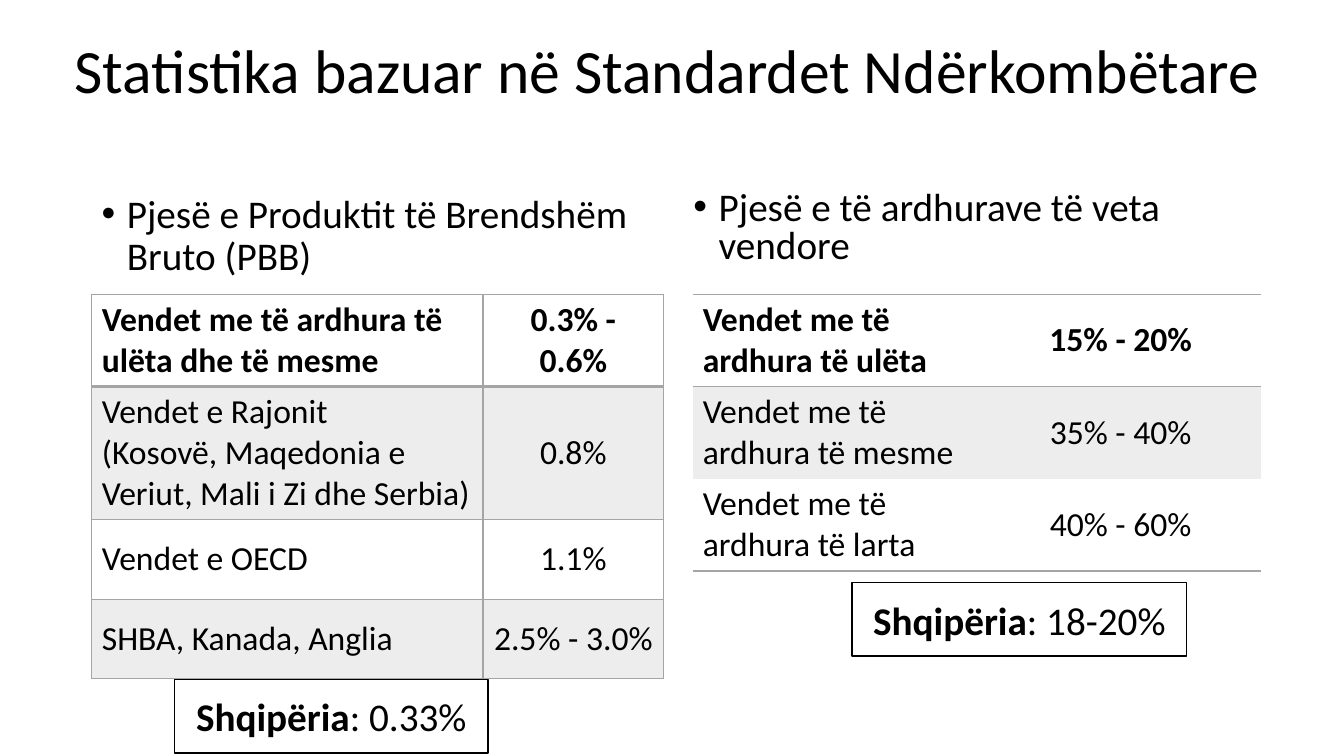
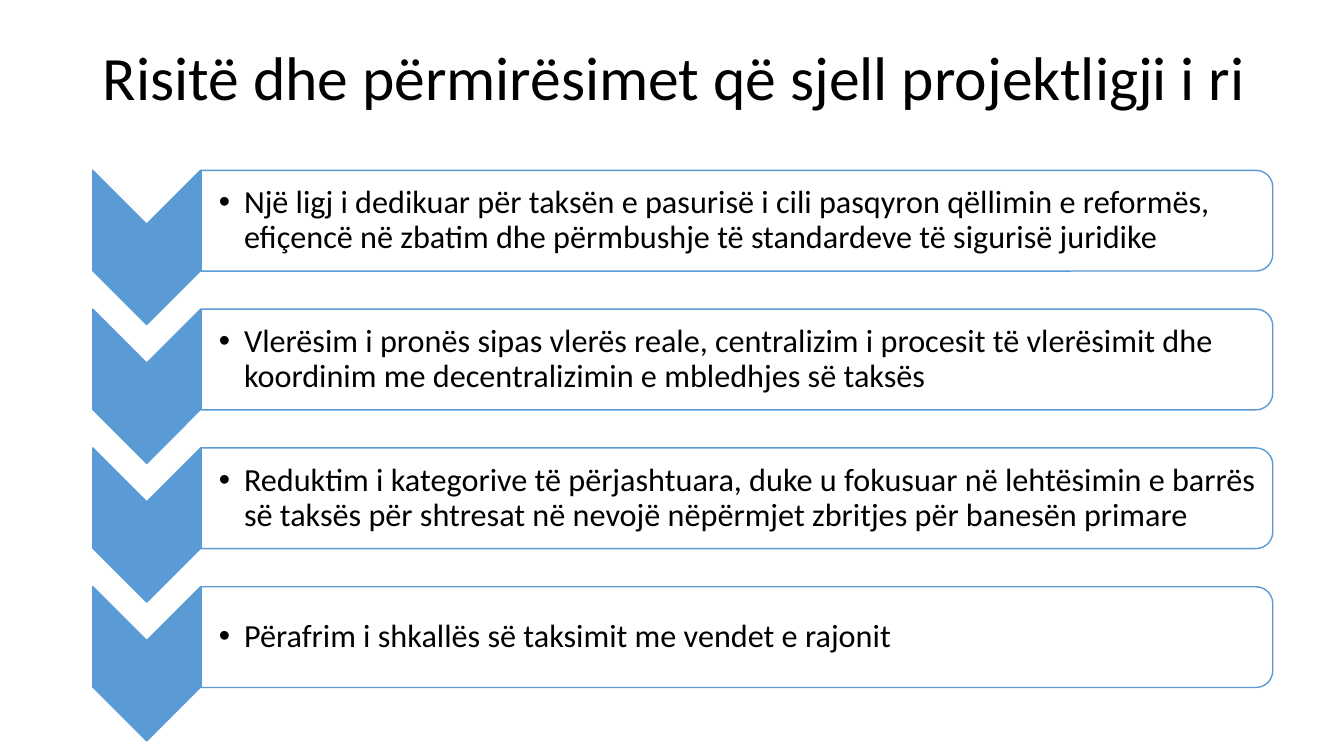
from pptx import Presentation
from pptx import util as u
from pptx.dml.color import RGBColor
from pptx.enum import shapes, text
from pptx.oxml.ns import qn
from lxml import etree

WIDTH, HEIGHT = u.Inches(13.33), u.Inches(7.5)
FONT = "Calibri"
BLACK, WHITE, GREY, PALE, BLUE = "000000", "FFFFFF", "A5A5A5", "EDEDED", "5B9BD5"
PLAIN_TABLE = "{2D5ABB26-0587-4C30-8999-92F81FD0307C}"
TABLE_TOP, HEAD_ROW, ROW = 38.93, 12.2, 10.53


def color(value):
    return RGBColor.from_string(value)


def across(percent):
    return round(WIDTH * percent / 100)


def down(percent):
    return round(HEIGHT * percent / 100)


def area(left, top, width, height):
    return across(left), down(top), across(width), down(height)


def add_bullet(paragraph):
    properties = paragraph._p.get_or_add_pPr()
    properties.set("marL", str(u.Inches(0.25)))
    properties.set("indent", str(-u.Inches(0.25)))
    etree.SubElement(properties, qn("a:buFont"), typeface="Arial")
    etree.SubElement(properties, qn("a:buChar"), char="•")


def write(frame, content, size=28, bold=False, align=text.PP_ALIGN.LEFT,
          anchor=text.MSO_ANCHOR.MIDDLE, spacing=None, bullet=False):
    frame.word_wrap = True
    frame.auto_size = text.MSO_AUTO_SIZE.NONE
    frame.vertical_anchor = anchor
    runs = [(content, bold)] if isinstance(content, str) else content
    paragraph = frame.paragraphs[0]
    for words, strong in runs:
        run = paragraph.add_run()
        run.text = words
        run.font.name, run.font.size, run.font.bold = FONT, u.Pt(size), strong
        run.font.color.rgb = color(BLACK)
    paragraph.alignment = align
    paragraph.line_spacing = spacing
    if bullet:
        add_bullet(paragraph)


def add_titled_slide(presentation, title, place):
    slide = presentation.slides.add_slide(presentation.slide_layouts[5])
    shape = slide.shapes.title
    shape.left, shape.top, shape.width, shape.height = area(*place)
    write(shape.text_frame, title, size=44, spacing=0.9)
    return slide


def add_text(slide, content, place, insets=None, **style):
    frame = slide.shapes.add_textbox(*area(*place)).text_frame
    if insets:
        (frame.margin_left, frame.margin_top,
         frame.margin_right, frame.margin_bottom) = map(u.Inches, insets)
    write(frame, content, **style)


def add_shape(slide, kind, place, fill, line):
    shape = slide.shapes.add_shape(kind, *place)
    shape.shadow.inherit = False
    shape.fill.solid()
    shape.fill.fore_color.rgb = color(fill)
    shape.line.color.rgb = color(line)
    shape.line.width = u.Pt(1)
    return shape


def add_turned_shape(slide, kind, place, fill):
    left, top, width, height = area(*place)
    shift = (width - height) // 2
    shape = add_shape(slide, kind, (left + shift, top - shift, height, width), fill, BLUE)
    shape.rotation = 90


def add_result(slide, value, place):
    shape = add_shape(slide, shapes.MSO_SHAPE.RECTANGLE, area(*place), WHITE, BLACK)
    write(shape.text_frame, [("Shqipëria", True), (f": {value}", False)],
          align=text.PP_ALIGN.CENTER)


def set_borders(cell, borders):
    properties = cell._tc.get_or_add_tcPr()
    for side in "LRTB":
        points = borders.get(side, 0)
        line = etree.SubElement(properties, qn(f"a:ln{side}"), w=str(u.Pt(points)))
        if points:
            fill = etree.SubElement(line, qn("a:solidFill"))
            etree.SubElement(fill, qn("a:srgbClr"), val=GREY)
        else:
            etree.SubElement(line, qn("a:noFill"))


def fill_cell(cell, content, row, column, borders):
    set_borders(cell, borders)
    if row % 2:
        cell.fill.solid()
        cell.fill.fore_color.rgb = color(PALE)
    else:
        cell.fill.background()
    cell.vertical_anchor = text.MSO_ANCHOR.MIDDLE
    align = text.PP_ALIGN.CENTER if column else text.PP_ALIGN.LEFT
    lines = content.split("\n")
    frame = cell.text_frame
    for line in lines:
        paragraph = frame.paragraphs[0] if line is lines[0] else frame.add_paragraph()
        paragraph.alignment = align
        run = paragraph.add_run()
        run.text = line
        run.font.name, run.font.size, run.font.bold = FONT, u.Pt(24), row == 0
        run.font.color.rgb = color(BLACK)


def add_table(slide, rows, left, columns, heights, borders_for):
    place = area(left, TABLE_TOP, sum(columns), sum(heights))
    table = slide.shapes.add_table(len(rows), len(columns), *place).table
    table.first_row = table.horz_banding = False
    table._tbl.tblPr.find(qn("a:tableStyleId")).text = PLAIN_TABLE
    for column, width in zip(table.columns, columns):
        column.width = across(width)
    for row, (contents, height) in enumerate(zip(rows, heights)):
        table.rows[row].height = down(height)
        for column, content in enumerate(contents):
            fill_cell(table.cell(row, column), content, row, column, borders_for(row))


def full_borders(row):
    return {"L": 1, "R": 1, "T": 2 if row == 1 else 1, "B": 1 if row else 2}


def open_borders(row):
    return ({"T": 1, "B": 1}, {"T": 1}, {"B": 1})[row]


def build_statistics(presentation):
    slide = add_titled_slide(presentation, "Statistika bazuar në Standardet Ndërkombëtare",
                             (4.8, 0, 92.12, 19.33))
    top = text.MSO_ANCHOR.TOP
    add_text(slide, "Pjesë e Produktit të Brendshëm Bruto (PBB)", (6.83, 25.07, 42.53, 12),
             anchor=top, spacing=0.9, bullet=True)
    add_text(slide, "Pjesë e të ardhurave të veta vendore", (50.86, 24.67, 42.31, 12),
             anchor=top, spacing=0.8, bullet=True)
    product_share = [
        ("Vendet me të ardhura të ulëta dhe të mesme", "0.3% - 0.6%"),
        ("Vendet e Rajonit\n(Kosovë, Maqedonia e Veriut, Mali i Zi dhe Serbia)", "0.8%"),
        ("Vendet e OECD", "1.1%"),
        ("SHBA, Kanada, Anglia", "2.5% - 3.0%"),
    ]
    revenue_share = [
        ("Vendet me të ardhura të ulëta", "15% - 20%"),
        ("Vendet me të ardhura të mesme", "35% - 40%"),
        ("Vendet me të ardhura të larta", "40% - 60%"),
    ]
    add_table(slide, product_share, 6.83, (29.11, 13.43), (HEAD_ROW, 17.6, ROW, ROW),
              full_borders)
    add_result(slide, "0.33%", (12.98, 89.87, 23.33, 9.73))
    add_table(slide, revenue_share, 51.54, (21.38, 20.93), [HEAD_ROW] * 3, open_borders)
    add_result(slide, "18-20%", (63.39, 77.07, 24.91, 9.73))


def build_improvements(presentation):
    slide = add_titled_slide(presentation, "Risitë dhe përmirësimet që sjell projektligji i ri",
                             (6.9, 0.93, 87.77, 19.33))
    improvements = [
        "Një ligj i dedikuar për taksën e pasurisë i cili pasqyron qëllimin e reformës, "
        "efiçencë në zbatim dhe përmbushje të standardeve të sigurisë juridike",
        "Vlerësim i pronës sipas vlerës reale, centralizim i procesit të vlerësimit dhe "
        "koordinim me decentralizimin e mbledhjes së taksës",
        "Reduktim i kategorive të përjashtuara, duke u fokusuar në lehtësimin e barrës "
        "së taksës për shtresat në nevojë nëpërmjet zbritjes për banesën primare",
        "Përafrim i shkallës së taksimit me vendet e rajonit",
    ]
    for index, improvement in enumerate(improvements):
        top = 22.53 + 18.36 * index
        add_turned_shape(slide, shapes.MSO_SHAPE.CHEVRON, (6.9, top, 8.03, 20.4), BLUE)
        add_turned_shape(slide, shapes.MSO_SHAPE.ROUND_2_SAME_RECTANGLE,
                         (14.96, top, 79.74, 13.33), WHITE)
        add_text(slide, improvement, (14.93, top + 0.67, 79.37, 12),
                 insets=(0.18, 0.02, 0.02, 0.02), size=23, spacing=0.9, bullet=True)


def main():
    presentation = Presentation()
    presentation.slide_width, presentation.slide_height = WIDTH, HEIGHT
    build_statistics(presentation)
    build_improvements(presentation)
    presentation.save("out.pptx")


if __name__ == "__main__":
    main()
